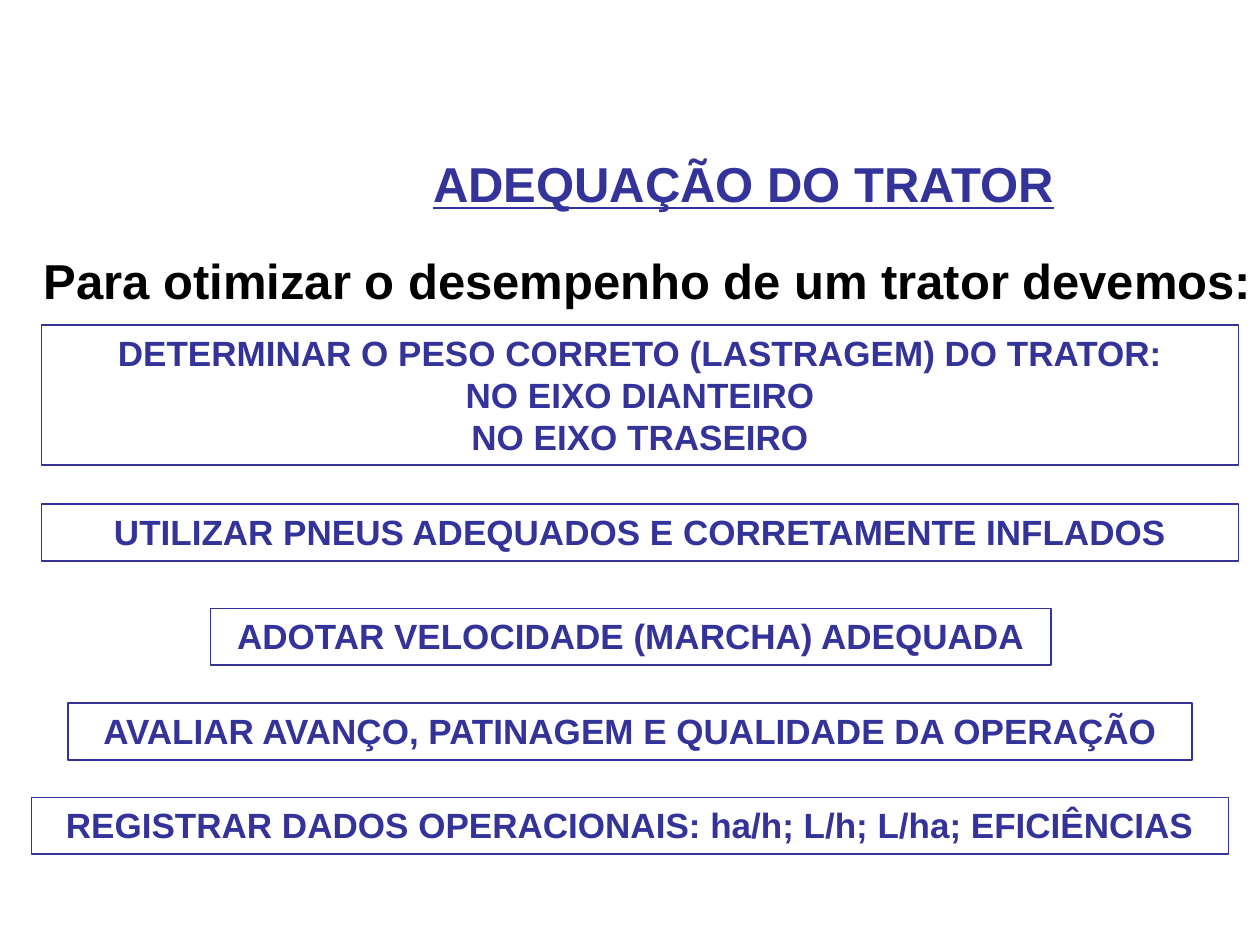
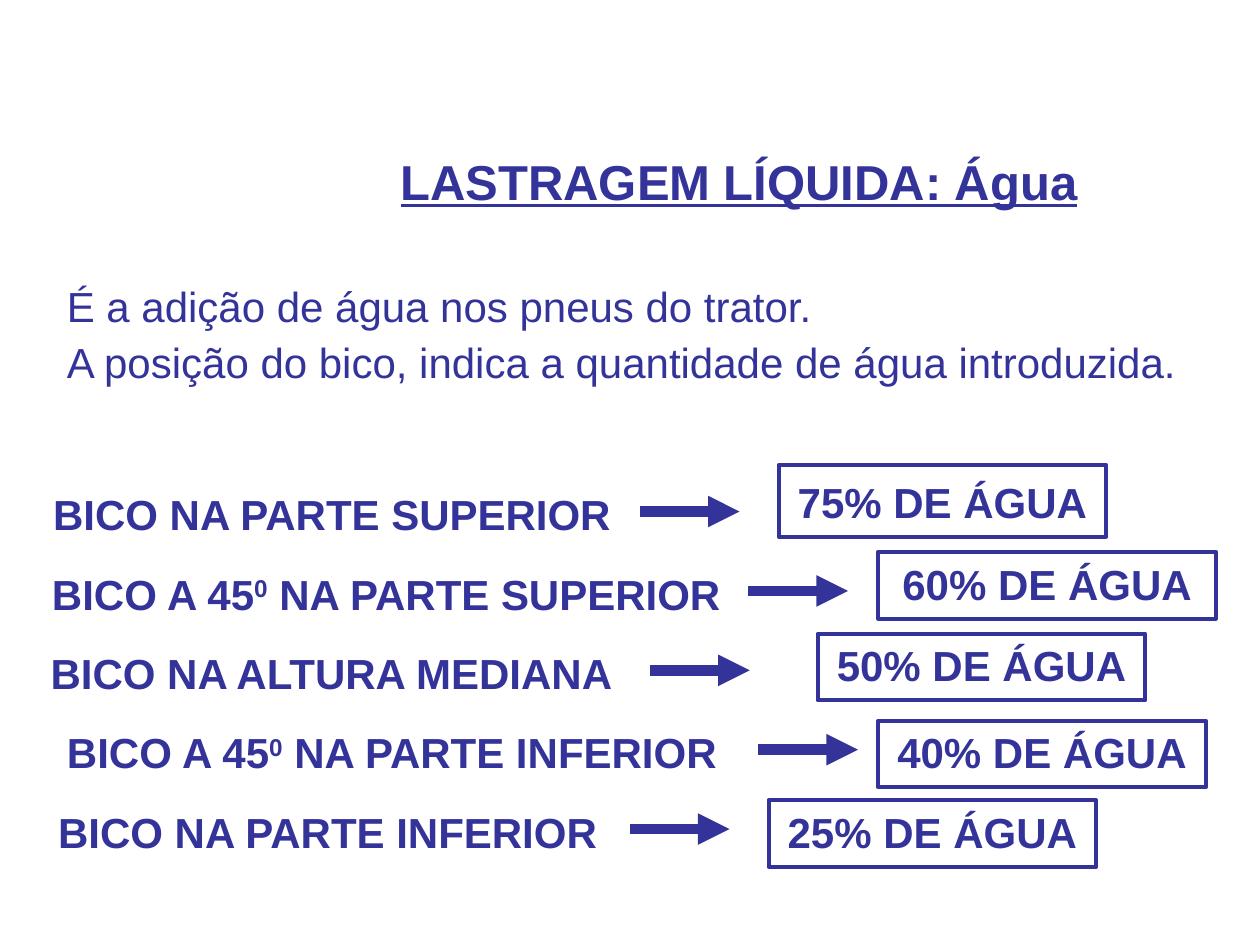
import pptx
import pptx.util
import pptx.dml.color
import pptx.enum.shapes
import pptx.enum.text
import pptx.oxml.ns
from lxml import etree

Inches = pptx.util.Inches
Pt = pptx.util.Pt
Align = pptx.enum.text.PP_ALIGN
Kind = pptx.enum.shapes.MSO_SHAPE
qn = pptx.oxml.ns.qn

HUES = {"blue": "333399", "white": "FFFFFF", "black": "000000"}
FRAME = {
    "word_wrap": True,
    "auto_size": pptx.enum.text.MSO_AUTO_SIZE.SHAPE_TO_FIT_TEXT,
    "vertical_anchor": pptx.enum.text.MSO_ANCHOR.TOP,
    "margin_left": Inches(0.1),
    "margin_right": Inches(0.1),
    "margin_top": Inches(0.05),
    "margin_bottom": Inches(0.05),
}
HEAD = {"size": Pt(28), "bold": True, "underline": True}
LEAD = {"size": Pt(28), "bold": True}
STEP = {"size": Pt(20), "bold": True}
BODY = {"size": Pt(24), "bold": False}
MARK = {"size": Pt(24), "bold": True}


def hue(name):
    return pptx.dml.color.RGBColor.from_string(HUES[name])


def style(item, look):
    for key, value in look.items():
        setattr(item, key, value)


class Deck:
    def __init__(self):
        self.show = pptx.Presentation()
        self.show.slide_width = Inches(10)
        self.show.slide_height = Inches(7.5)
        self.slide = None

    def page(self, layout, title, place):
        self.slide = self.show.slides.add_slide(self.show.slide_layouts[layout])
        self.put(self.slide.shapes.title, place)
        self.fill(self.slide.shapes.title, [title], HEAD)

    def put(self, shape, place):
        for key, value in zip(("left", "top", "width", "height"), place):
            setattr(shape, key, Inches(value))

    def fill(self, shape, lines, look, align=Align.CENTER, color="blue", wrap=True):
        frame = shape.text_frame
        style(frame, FRAME)
        frame.word_wrap = wrap
        for i, line in enumerate(lines):
            para = frame.add_paragraph() if i else frame.paragraphs[0]
            style(para, {"alignment": align, "space_before": Pt(0)})
            for j, part in enumerate(line.split("^")):
                run = para.add_run()
                run.text = part
                style(run.font, {"name": "Arial", **look})
                run.font.color.rgb = hue(color)
                if j % 2:
                    run.font._element.set("baseline", "30000")
        return frame.paragraphs

    def text(self, line, place, look, **more):
        box = self.slide.shapes.add_textbox(*map(Inches, place))
        self.fill(box, [line], look, **more)

    def list(self, lines, place, gaps):
        body = self.slide.placeholders[1]
        self.put(body, place)
        paras = self.fill(body, lines, BODY, Align.JUSTIFY)
        for para, (gap, space) in zip(paras, gaps):
            style(para, {"line_spacing": gap, "space_before": Pt(space)})
            props = para._p.get_or_add_pPr()
            props.set("marL", "0")
            props.set("indent", "0")
            etree.SubElement(props, qn("a:buNone"))

    def box(self, lines, place, look, width, gap=1.0):
        rect = self.slide.shapes.add_shape(Kind.RECTANGLE, *map(Inches, place))
        rect.shadow.inherit = False
        rect.fill.solid()
        rect.fill.fore_color.rgb = hue("white")
        rect.line.color.rgb = hue("blue")
        rect.line.width = Pt(width)
        for para in self.fill(rect, lines, look):
            para.line_spacing = gap

    def arrow(self, left, top, span):
        ends = map(Inches, (left, top, left + span, top))
        line = self.slide.shapes.add_connector(
            pptx.enum.shapes.MSO_CONNECTOR.STRAIGHT, *ends)
        line.line.color.rgb = hue("blue")
        line.line.width = Pt(6)
        tail = etree.SubElement(line.line._get_or_add_ln(), qn("a:tailEnd"))
        tail.set("type", "triangle")
        etree.SubElement(line._element.spPr, qn("a:effectLst"))


def tractor(deck):
    deck.page(5, "ADEQUAÇÃO DO TRATOR", (2.83, 1.17, 6.14, 0.57))
    deck.text("Para otimizar o desempenho de um trator devemos:",
              (0.25, 1.94, 9.81, 0.57), LEAD,
              align=Align.LEFT, color="black", wrap=False)
    weight = ["DETERMINAR O PESO CORRETO (LASTRAGEM) DO TRATOR:",
              "NO EIXO DIANTEIRO", "NO EIXO TRASEIRO"]
    deck.box(weight, (0.33, 2.58, 9.5, 1.11), STEP, 1)
    steps = [
        ("UTILIZAR PNEUS ADEQUADOS E CORRETAMENTE INFLADOS", 0.33, 4, 9.5),
        ("ADOTAR VELOCIDADE (MARCHA) ADEQUADA", 1.67, 4.83, 6.67),
        ("AVALIAR AVANÇO, PATINAGEM E QUALIDADE DA OPERAÇÃO", 0.54, 5.58, 8.92),
        ("REGISTRAR DADOS OPERACIONAIS: ha/h; L/h; L/ha; EFICIÊNCIAS", 0.25, 6.33, 9.5),
    ]
    for label, left, top, width in steps:
        deck.box([label], (left, top, width, 0.45), STEP, 1)


def water(deck):
    deck.page(1, "LASTRAGEM LÍQUIDA: Água", (2.48, 1.15, 6.77, 0.57))
    deck.list(["É a adição de água nos pneus do trator.",
               "A posição do bico, indica a quantidade de água introduzida."],
              (0.43, 2.25, 9.13, 0.86), [(0.8, 0), (0.6, 14)])
    rows = [
        ("BICO NA PARTE SUPERIOR", 0.27, 4.73, 5.08, 75, (6.18, 3.69, 2.6, 0.57), 1.1),
        ("BICO A 45^0^ NA PARTE SUPERIOR", 0.19, 5.75, 5.94, 60, (6.97, 4.38, 2.68, 0.53), 1.0),
        ("BICO NA ALTURA MEDIANA", 0.19, 4.88, 5.16, 50, (6.49, 5.03, 2.6, 0.53), 1.0),
        ("BICO A 45^0^ NA PARTE INFERIOR", 0.04, 6.14, 6.02, 40, (6.97, 5.72, 2.6, 0.53), 1.0),
        ("BICO NA PARTE INFERIOR", 0.04, 5.12, 5, 25, (6.1, 6.35, 2.6, 0.53), 1.0),
    ]
    for i, (label, left, width, start, share, place, gap) in enumerate(rows):
        top = 3.83 + 0.63 * i
        deck.text(label, (left, top, width, 0.5), MARK)
        deck.arrow(start, top + 0.23, 0.79)
        deck.box([f"{share}% DE ÁGUA"], place, MARK, 2.25, gap)


def main():
    deck = Deck()
    tractor(deck)
    water(deck)
    deck.show.save("out.pptx")


if __name__ == "__main__":
    main()
